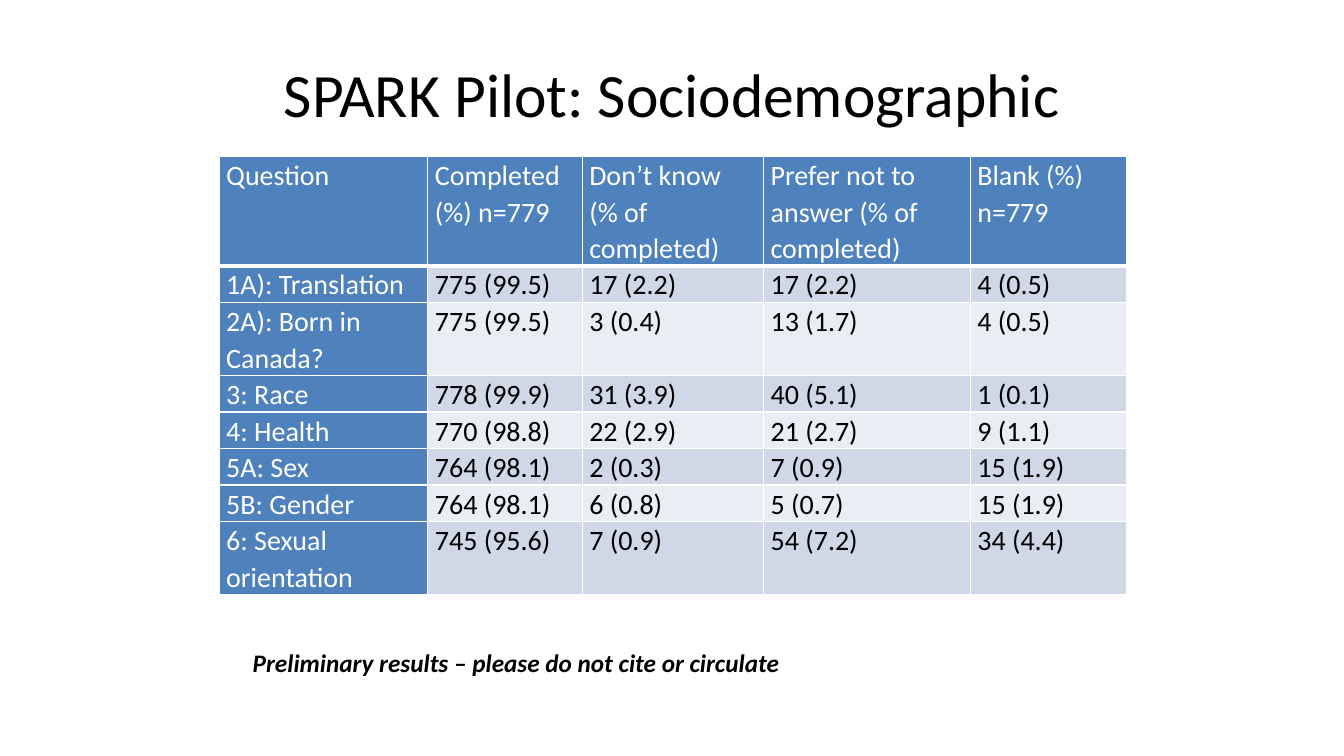
from dataclasses import dataclass

from lxml import etree
from pptx import Presentation
from pptx import util as u
from pptx.dml import color
from pptx.enum import text
from pptx.oxml import ns


@dataclass(frozen=True)
class Theme:
    font: str = "Calibri"
    ink: str = "000000"
    paper: str = "FFFFFF"
    accent: str = "4F81BD"
    bands: tuple[str, str] = ("D0D8E8", "E9EDF4")
    title_size: int = 44
    table_size: int = 20
    note_size: int = 18


@dataclass(frozen=True)
class Caption:
    wording: str
    left: float
    top: float
    width: float
    height: float
    size: int
    frame_format: dict
    emphasis: bool = False
    align: text.PP_ALIGN = text.PP_ALIGN.LEFT


@dataclass(frozen=True)
class Response:
    question: str
    completed: str
    unknown: str
    declined: str
    blank: str
    lines: int = 1

    def entries(self) -> tuple[str, ...]:
        return self.question, self.completed, self.unknown, self.declined, self.blank


THEME = Theme()
COLUMN_WIDTHS = (5.26, 3.89, 4.57, 5.21, 3.94)
LINE_HEIGHT = 0.92

CAPTIONS = (
    Caption("SPARK Pilot: Sociodemographic", 1.7, 0.76, 30.48, 3.18, THEME.title_size,
            {"word_wrap": True, "vertical_anchor": text.MSO_ANCHOR.MIDDLE},
            align=text.PP_ALIGN.CENTER),
    Caption("Preliminary results – please do not cite or circulate",
            6.12, 16.18, 13.92, 1.02, THEME.note_size,
            {"word_wrap": False, "auto_size": text.MSO_AUTO_SIZE.SHAPE_TO_FIT_TEXT},
            emphasis=True),
)

RESPONSES = (
    Response("Question", "Completed\n(%) n=779", "Don’t know\n(% of completed)",
             "Prefer not to answer (% of completed)", "Blank (%)\nn=779", 3),
    Response("1A): Translation", "775 (99.5)", "17 (2.2)", "17 (2.2)", "4 (0.5)"),
    Response("2A): Born in Canada?", "775 (99.5)", "3 (0.4)", "13 (1.7)", "4 (0.5)", 2),
    Response("3: Race", "778 (99.9)", "31 (3.9)", "40 (5.1)", "1 (0.1)"),
    Response("4: Health", "770 (98.8)", "22 (2.9)", "21 (2.7)", "9 (1.1)"),
    Response("5A: Sex", "764 (98.1)", "2 (0.3)", "7 (0.9)", "15 (1.9)"),
    Response("5B: Gender", "764 (98.1)", "6 (0.8)", "5 (0.7)", "15 (1.9)"),
    Response("6: Sexual orientation", "745 (95.6)", "7 (0.9)", "54 (7.2)", "34 (4.4)", 2),
)


def apply_format(target, values: dict) -> None:
    for attribute, value in values.items():
        setattr(target, attribute, value)


def write(frame, wording: str, size: int, ink: str, emphasis: bool,
          paragraph_format: dict) -> None:
    frame.text = wording
    for paragraph in frame.paragraphs:
        apply_format(paragraph, paragraph_format)
        for run in paragraph.runs:
            apply_format(run.font, {"name": THEME.font, "size": u.Pt(size),
                                    "bold": emphasis, "italic": emphasis})
            run.font.color.rgb = color.RGBColor.from_string(ink)


def draw_caption(slide, caption: Caption) -> None:
    bounds = (caption.left, caption.top, caption.width, caption.height)
    frame = slide.shapes.add_textbox(*map(u.Cm, bounds)).text_frame
    apply_format(frame, caption.frame_format)
    write(frame, caption.wording, caption.size, THEME.ink, caption.emphasis,
          {"alignment": caption.align})


def draw_borders(cell, widths: dict[str, int]) -> None:
    properties = cell._tc.get_or_add_tcPr()
    for side, points in widths.items():
        line = etree.SubElement(properties, ns.qn(f"a:ln{side}"), w=str(u.Pt(points)))
        fill = etree.SubElement(line, ns.qn("a:solidFill"))
        etree.SubElement(fill, ns.qn("a:srgbClr"), val=THEME.paper)


def draw_entry(cell, wording: str, row: int, column: int) -> None:
    heading = row == 0 or column == 0
    borders = {"L": 1, "R": 1, "T": 1, "B": 3} if row == 0 else {"L": 1, "R": 1, "B": 1}
    draw_borders(cell, borders)
    cell.fill.solid()
    shade = THEME.accent if heading else THEME.bands[(row - 1) % 2]
    cell.fill.fore_color.rgb = color.RGBColor.from_string(shade)
    apply_format(cell, {"margin_left": u.Cm(0.18), "margin_right": u.Cm(0.18),
                        "margin_top": 0, "margin_bottom": 0})
    write(cell.text_frame, wording, THEME.table_size,
          THEME.paper if heading else THEME.ink, False, {"line_spacing": 1.07})


def draw_responses(slide, responses: tuple[Response, ...]) -> None:
    height = LINE_HEIGHT * sum(response.lines for response in responses)
    bounds = (5.52, 3.94, sum(COLUMN_WIDTHS), height)
    results = slide.shapes.add_table(
        len(responses), len(COLUMN_WIDTHS), *map(u.Cm, bounds)).table
    results.first_col = True
    for column, width in zip(results.columns, COLUMN_WIDTHS):
        column.width = u.Cm(width)
    for row, response in enumerate(responses):
        results.rows[row].height = u.Cm(LINE_HEIGHT * response.lines)
        for column, wording in enumerate(response.entries()):
            draw_entry(results.cell(row, column), wording, row, column)


def main() -> None:
    deck = Presentation()
    apply_format(deck, {"slide_width": u.Cm(33.87), "slide_height": u.Cm(19.05)})
    slide = deck.slides.add_slide(deck.slide_layouts[6])
    title, note = CAPTIONS
    draw_caption(slide, title)
    draw_responses(slide, RESPONSES)
    draw_caption(slide, note)
    deck.save("out.pptx")


if __name__ == "__main__":
    main()
